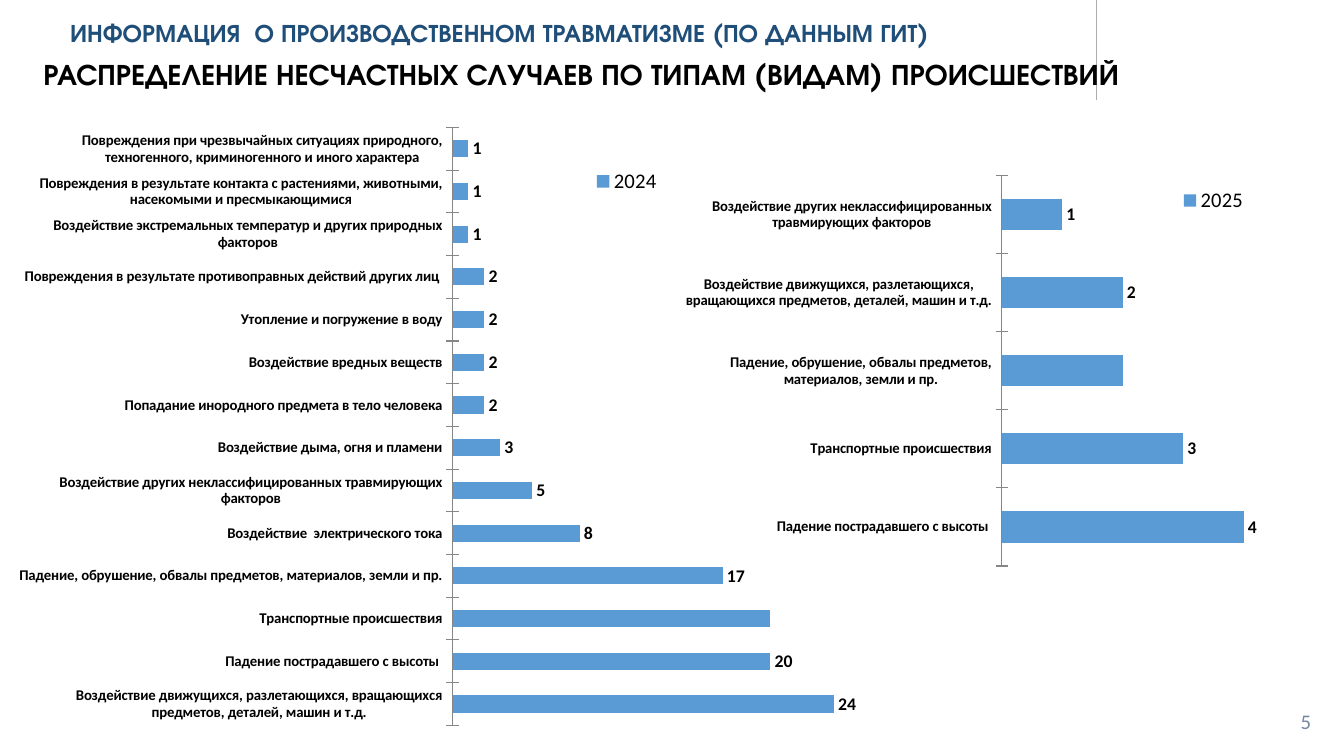
from pptx import Presentation
from pptx.chart.data import CategoryChartData
from pptx.dml.color import RGBColor
from pptx.enum.chart import (XL_CHART_TYPE, XL_LABEL_POSITION,
                             XL_LEGEND_POSITION, XL_TICK_LABEL_POSITION,
                             XL_TICK_MARK)
from pptx.enum.shapes import MSO_CONNECTOR
from pptx.enum.text import MSO_ANCHOR, PP_ALIGN
from pptx.oxml import parse_xml
from pptx.oxml.ns import qn
from pptx.util import Cm, Pt
from lxml import etree

BAR = XL_CHART_TYPE.BAR_CLUSTERED
OUTER = XL_LABEL_POSITION.OUTSIDE_END
RIGHT_KEY = XL_LEGEND_POSITION.RIGHT
LOW = XL_TICK_LABEL_POSITION.LOW
CROSS = XL_TICK_MARK.CROSS
STRAIGHT = MSO_CONNECTOR.STRAIGHT
TOP, MIDDLE = MSO_ANCHOR.TOP, MSO_ANCHOR.MIDDLE
LEFT, CENTER, RIGHT = PP_ALIGN.LEFT, PP_ALIGN.CENTER, PP_ALIGN.RIGHT

BLACK = RGBColor(0x00, 0x00, 0x00)
NAVY = RGBColor(0x1F, 0x4E, 0x79)
BLUE = RGBColor(0x5B, 0x9B, 0xD5)
SLATE = RGBColor(0x76, 0x88, 0xA1)
SILVER = RGBColor(0xAF, 0xAB, 0xAB)
GRAY = RGBColor(0x86, 0x86, 0x86)

HEAD = "TeX Gyre Adventor"
BODY = "Calibri"
CHART_NS = "http://schemas.openxmlformats.org/drawingml/2006/chart"

# Accident types found in both years
FALL = "Падение пострадавшего с высоты "
ROAD = "Транспортные происшествия"
DEBRIS = "Падение, обрушение, обвалы предметов, материалов, земли и пр."
MOVING = ("Воздействие движущихся, разлетающихся, вращающихся предметов, "
          "деталей, машин и т.д.")
OTHER = "Воздействие других неклассифицированных травмирующих факторов"

CASES_2024 = [
    (MOVING, 24),
    (FALL, 20),
    (ROAD, 20),
    (DEBRIS, 17),
    ("Воздействие  электрического тока", 8),
    (OTHER, 5),
    ("Воздействие дыма, огня и пламени", 3),
    ("Попадание инородного предмета в тело человека", 2),
    ("Воздействие вредных веществ", 2),
    ("Утопление и погружение в воду", 2),
    ("Повреждения в результате противоправных действий других лиц ", 2),
    ("Воздействие экстремальных температур и других природных факторов", 1),
    ("Повреждения в результате контакта с растениями, животными, "
     "насекомыми и пресмыкающимися", 1),
    ("Повреждения при чрезвычайных ситуациях природного, техногенного, "
     "криминогенного и иного характера", 1),
]
CASES_2025 = [(FALL, 4), (ROAD, 3), (DEBRIS, 2), (MOVING, 2), (OTHER, 1)]
BARE = 2  # the bar without a value label in both charts


class Sheet:
    def __init__(self, slide):
        self.shapes = slide.shapes

    def style(self, font, size, color=BLACK, bold=False, name=BODY):
        font.name, font.size, font.bold = name, Pt(size), bold
        font.color.rgb = color

    def rule(self, x1, y1, x2, y2):
        line = self.shapes.add_connector(STRAIGHT, Cm(x1), Cm(y1),
                                         Cm(x2), Cm(y2))
        line.line.color.rgb = SILVER
        line.line.width = Pt(0.75)
        etree.SubElement(line._element.spPr, qn("a:effectLst"))

    def text(self, words, box, size, color, name=HEAD, bold=True, align=LEFT,
             anchor=TOP, pads=(0.25, 0.13), space=1.0):
        frame = self.shapes.add_textbox(*map(Cm, box)).text_frame
        frame.word_wrap = True
        frame.vertical_anchor = anchor
        frame.margin_left = frame.margin_right = Cm(pads[0])
        frame.margin_top = frame.margin_bottom = Cm(pads[1])
        para = frame.paragraphs[0]
        para.text, para.alignment, para.line_spacing = words, align, space
        self.style(para.font, size, color, bold, name)

    def place(self, part, index, inner=False, **spots):
        """Set a manual layout, in shares of the chart, on a chart part."""
        for old in part.findall(qn("c:layout")):
            part.remove(old)
        tags = '<c:layoutTarget val="inner"/>' if inner else ""
        tags += '<c:xMode val="edge"/><c:yMode val="edge"/>'
        tags += "".join(f'<c:{key} val="{val}"/>'
                        for key, val in spots.items())
        part.insert(index, parse_xml(
            f'<c:layout xmlns:c="{CHART_NS}"><c:manualLayout>{tags}'
            '</c:manualLayout></c:layout>'))

    def bars(self, year, cases, box, top, plot, key):
        data = CategoryChartData()
        data.categories = [name for name, _ in cases]
        data.add_series(year, [count for _, count in cases])
        chart = self.shapes.add_chart(BAR, *map(Cm, box), data).chart
        self.style(chart.font, 18)
        chart.has_title = False

        # Axes
        cat, val = chart.category_axis, chart.value_axis
        cat.major_tick_mark = CROSS
        cat.tick_label_position = LOW
        cat.format.line.color.rgb = GRAY
        self.style(cat.tick_labels.font, 10, bold=True)
        val.minimum_scale, val.maximum_scale = 0, top
        val.has_major_gridlines = False
        val.visible = False

        # Bars and value labels
        group = chart.plots[0]
        group.vary_by_categories = False
        group.gap_width = 150
        series = group.series[0]
        series.format.fill.solid()
        series.format.fill.fore_color.rgb = BLUE
        labels = series.data_labels
        labels.show_value = True
        labels.position = OUTER
        self.style(labels.font, 12, bold=True)
        labels._element.insert(0, parse_xml(
            f'<c:dLbl xmlns:c="{CHART_NS}"><c:idx val="{BARE}"/>'
            '<c:delete val="1"/></c:dLbl>'))

        # Legend and plot area
        chart.has_legend = True
        chart.legend.position = RIGHT_KEY
        chart.legend.include_in_layout = False
        self.style(chart.legend.font, 14)
        self.place(chart.legend._element, 1, x=key[0], y=key[1])
        area = chart._chartSpace.chart.plotArea
        self.place(area, 0, True, **dict(zip("xywh", plot)))


def main():
    deck = Presentation()
    deck.slide_width, deck.slide_height = Cm(32), Cm(18)
    sheet = Sheet(deck.slides.add_slide(deck.slide_layouts[6]))

    # Headings
    sheet.rule(26.11, 0, 26.11, 2.39)
    sheet.text("ИНФОРМАЦИЯ  О ПРОИЗВОДСТВЕННОМ ТРАВМАТИЗМЕ (ПО ДАННЫМ ГИТ)",
               (1.42, 0.36, 24.82, 1.5), 17, NAVY, space=0.9)
    sheet.text("РАСПРЕДЕЛЕНИЕ НЕСЧАСТНЫХ СЛУЧАЕВ ПО ТИПАМ (ВИДАМ) ПРОИСШЕСТВИЙ",
               (0.71, 1.3, 26.26, 1.75), 20, BLACK, align=CENTER,
               pads=(0, 0.03))

    # Slide number
    sheet.text("5", (24, 16.69, 7.47, 0.97), 14, SLATE, BODY, False, RIGHT,
               MIDDLE)

    # Cases by year
    sheet.bars("2025", CASES_2025, (16.33, 3.89, 14.58, 9.6), 4.5,
               (0.51, 0.03, 0.45, 0.97), (0.8, 0.05))
    sheet.bars("2024", CASES_2024, (0.46, 2.74, 21.89, 14.68), 30,
               (0.47, 0.02, 0.52, 0.97), (0.62, 0.08))

    deck.save("out.pptx")


if __name__ == "__main__":
    main()
